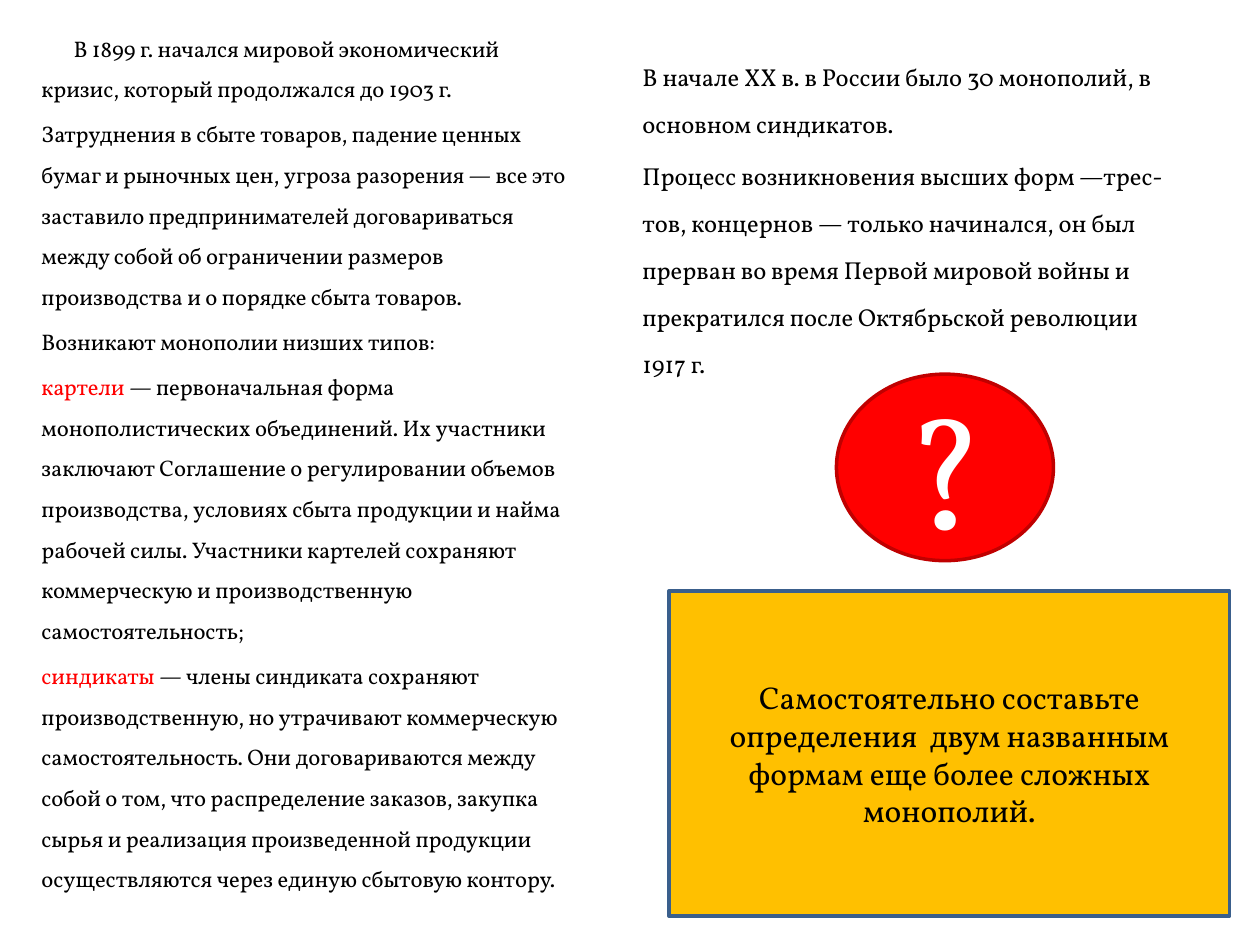
import pptx
import pptx.dml.color
import pptx.enum.shapes
import pptx.enum.text
import pptx.util

Pt = pptx.util.Pt
Color = pptx.dml.color.RGBColor.from_string
Align = pptx.enum.text.PP_ALIGN
Anchor = pptx.enum.text.MSO_ANCHOR
Form = pptx.enum.shapes.MSO_SHAPE


class Theme:
    font = "Vollkorn"
    black, white, red = "000000", "FFFFFF", "FF0000"
    maroon, gold, blue = "C00000", "FFC000", "3A5F8C"
    left, right, task, mark = 12.9, 14, 18, 88
    edge = 2


def apply(target, values):
    for name, value in values.items():
        setattr(target, name, value)


class Page:
    """Holds the theme and the current slide, and adds text and shapes to it."""

    def __init__(self, deck, theme):
        self.theme = theme
        self.slide = deck.slides.add_slide(deck.slide_layouts[6])

    def words(self, para, text, size, color):
        for i, line in enumerate(text.split("\n")):
            if i:
                para.add_line_break()
            run = para.add_run()
            run.text = line
            apply(run.font, {"name": self.theme.font, "size": Pt(size)})
            run.font.color.rgb = Color(color)

    def column(self, box, paras, size, lead, indent=0, frame=None):
        body = self.slide.shapes.add_textbox(*map(Pt, box)).text_frame
        apply(body, {"word_wrap": True, **(frame or {})})
        for i, (term, text) in enumerate(paras):
            para = body.add_paragraph() if i else body.paragraphs[0]
            apply(para, {"line_spacing": lead, "space_before": Pt(size * 0.2)})
            if indent and not i:
                para._p.get_or_add_pPr().set("indent", str(Pt(indent)))
            if term:
                self.words(para, term, size, self.theme.red)
            self.words(para, text, size, self.theme.black)

    def shape(self, form, box, fill, edge, text, size, color):
        item = self.slide.shapes.add_shape(form, *map(Pt, box))
        item.shadow.inherit = False
        item.fill.solid()
        item.fill.fore_color.rgb = Color(fill)
        item.line.color.rgb = Color(edge)
        item.line.width = Pt(self.theme.edge)
        body = item.text_frame
        apply(body, {"word_wrap": True, "vertical_anchor": Anchor.MIDDLE})
        para = body.paragraphs[0]
        para.alignment = Align.CENTER
        self.words(para, text, size, color)


CRISIS = [
    ("", "В 1899 г. начался мировой экономический кризис, который "
         "продолжался до 1903 г."),
    ("", "Затруднения в сбыте товаров, падение ценных бумаг и рыночных цен, "
         "угроза разорения — все это заставило предпринимателей "
         "договариваться между собой об ограничении размеров производства "
         "и о порядке сбыта товаров."),
    ("", "Возникают монополии низших типов:"),
    ("картели ", "— первоначальная форма монополистических объединений. Их "
     "участники заключают Соглашение о регулировании объемов производства, "
     "условиях сбыта продукции и найма рабочей силы. Участники картелей "
     "сохраняют коммерческую и производственную самостоятельность;"),
    ("синдикаты ", "— члены синдиката сохраняют производственную, но "
     "утрачивают коммерческую самостоятельность. Они договариваются между "
     "собой о том, что распределение заказов, закупка сырья и реализация "
     "произведенной продукции осуществляются через единую сбытовую контору."),
]
GROWTH = [
    ("", "В начале XX в. в России было 30 монополий, в основном синдикатов."),
    ("", "Процесс возникновения высших форм —трес-\nтов, концернов — только "
         "начинался, он был прерван во время Первой мировой войны и "
         "прекратился после Октябрьской революции 1917 г."),
]
TASK = ("Самостоятельно составьте определения  двум названным формам еще "
        "более сложных монополий.")


def main():
    deck = pptx.Presentation()
    apply(deck, {"slide_width": Pt(720), "slide_height": Pt(540)})
    theme = Theme()
    page = Page(deck, theme)
    page.column((360, 21.6, 324, 204), GROWTH, theme.right, 1.6)
    page.column((16.6, 0, 320.4, 540), CRISIS, theme.left, 1.5, indent=18.3,
                frame={"vertical_anchor": Anchor.MIDDLE,
                       "margin_bottom": Pt(21.6)})
    page.shape(Form.OVAL, (478, 213.8, 124, 106.6), theme.red, theme.maroon,
               "?", theme.mark, theme.white)
    page.shape(Form.RECTANGLE, (382.3, 337.7, 320.4, 185.8), theme.gold,
               theme.blue, TASK, theme.task, theme.black)
    deck.save("out.pptx")


if __name__ == "__main__":
    main()
